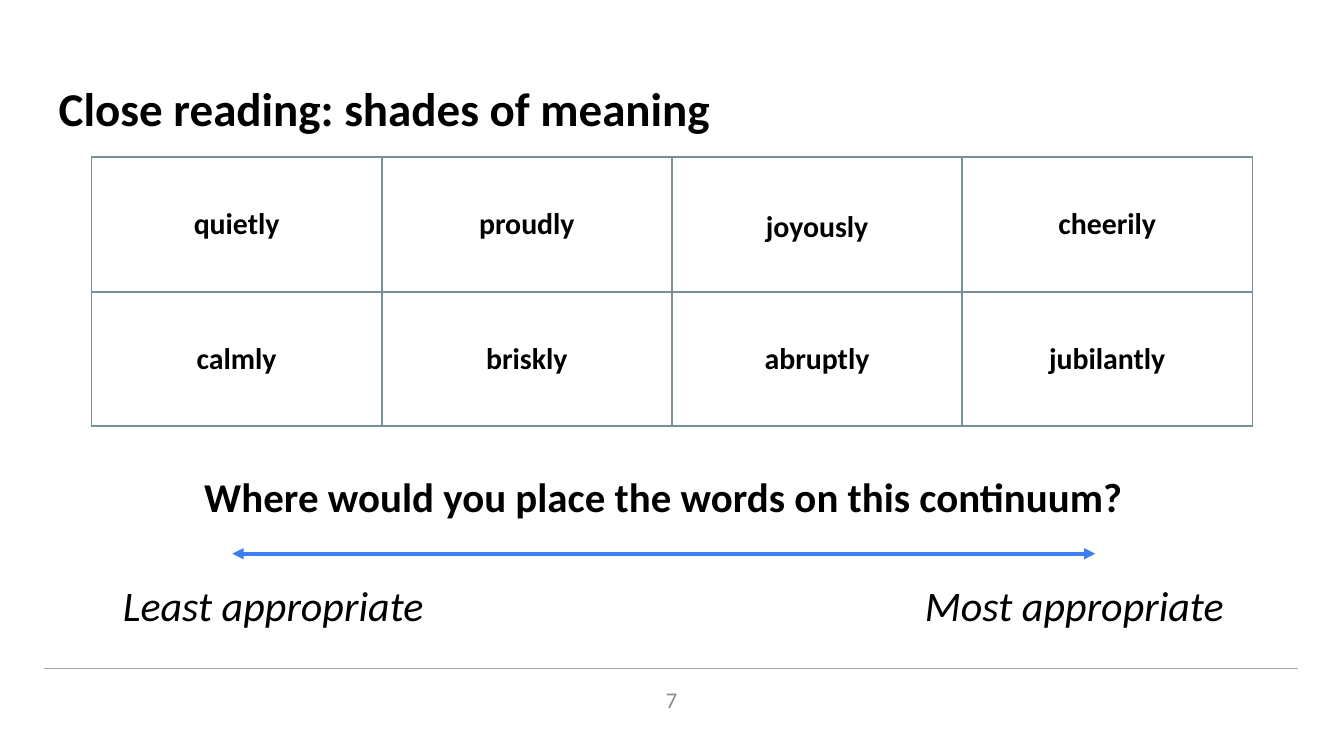
import pptx
import pptx.util
import pptx.dml.color
import pptx.enum.shapes
import pptx.enum.text
import pptx.oxml
import pptx.oxml.ns
from pptx.util import Cm

FONT = "Calibri"
COLORS = {
    "text": "000000",
    "grid": "78909C",
    "arrow": "3B7FF2",
    "rule": "A5A5A5",
    "number": "898989",
}
WORDS = [
    ["quietly", "proudly", "joyously", "cheerily"],
    ["calmly", "briskly", "abruptly", "jubilantly"],
]
ALIGN = pptx.enum.text.PP_ALIGN
ANCHOR = pptx.enum.text.MSO_ANCHOR


def rgb(name):
    return pptx.dml.color.RGBColor.from_string(COLORS[name])


def xml(tag, inner="", attrs=""):
    ns = pptx.oxml.ns.nsdecls("a")
    return pptx.oxml.parse_xml(f"<a:{tag} {ns} {attrs}>{inner}</a:{tag}>")


def style_text(tf, text, size, color="text", align=ALIGN.LEFT, bold=False, italic=False):
    tf.text = text
    p = tf.paragraphs[0]
    p.alignment = align
    for r in p.runs:
        r.font.name = FONT
        r.font.size = pptx.util.Pt(size)
        r.font.bold = bold
        r.font.italic = italic
        r.font.color.rgb = rgb(color)


def add_text(slide, box, text, size, anchor=ANCHOR.TOP, **style):
    tf = slide.shapes.add_textbox(*map(Cm, box)).text_frame
    tf.word_wrap = True
    tf.vertical_anchor = anchor
    style_text(tf, text, size, **style)


def add_line(slide, x1, x2, y, color, width, arrows=False):
    """Draw a horizontal line, with an arrowhead at each end if asked."""
    straight = pptx.enum.shapes.MSO_CONNECTOR.STRAIGHT
    line = slide.shapes.add_connector(straight, Cm(x1), Cm(y), Cm(x2), Cm(y))
    line.line.color.rgb = rgb(color)
    line.line.width = pptx.util.Pt(width)
    if arrows:
        ln = line.line._get_or_add_ln()
        for end in ("headEnd", "tailEnd"):
            ln.append(xml(end, attrs='type="triangle"'))
    line._element.spPr.append(xml("effectLst"))


def add_borders(cell):
    tc_pr = cell._tc.get_or_add_tcPr()
    fill = f'<a:solidFill><a:srgbClr val="{COLORS["grid"]}"/></a:solidFill>'
    for i, side in enumerate(("lnL", "lnR", "lnT", "lnB")):
        tc_pr.insert(i, xml(side, fill, f'w="{pptx.util.Pt(1)}"'))


def add_word_table(slide, left, top, width, height):
    rows, cols = len(WORDS), len(WORDS[0])
    frame = slide.shapes.add_table(rows, cols, Cm(left), Cm(top), Cm(width), Cm(height))
    table = frame.table
    table.first_row = False
    table.horz_banding = False
    for col in table.columns:
        col.width = Cm(width / cols)
    for row, words in zip(table.rows, WORDS):
        row.height = Cm(height / rows)
        for cell, word in zip(row.cells, words):
            cell.fill.background()
            add_borders(cell)
            cell.vertical_anchor = ANCHOR.MIDDLE
            cell.margin_left = cell.margin_right = Cm(0.28)
            style_text(cell.text_frame, word, 16, align=ALIGN.CENTER, bold=True)
            if word == "joyously":
                cell.text_frame.paragraphs[0].line_spacing = 1.15


def add_continuum(slide, left, top, width):
    """Place the question, the two-headed arrow and the labels of its ends."""
    add_text(slide, (left + 2.21, top, 18.21, 1.7),
             "Where would you place the words on this continuum?", 21.9, bold=True)
    add_line(slide, left + 2.99, left + 19.3, top + 1.67, "arrow", 2, arrows=True)
    ends = [("Least appropriate", left, 7.54),
            ("Most appropriate", left + width - 6.48, 6.48)]
    for label, x, w in ends:
        add_text(slide, (x, top + 2.03, w, 1.27), label, 22.5,
                 align=ALIGN.CENTER, italic=True)


def add_footer(slide, left, top, width):
    add_line(slide, left, left + width, top, "rule", 0.75)
    number_width = 5.92
    add_text(slide, (left + (width - number_width) / 2, top + 0.08, number_width, 1.02),
             "7", 12, anchor=ANCHOR.MIDDLE, color="number", align=ALIGN.CENTER)


def main():
    prs = pptx.Presentation()
    prs.slide_width, prs.slide_height = Cm(25.4), Cm(14.28)
    slide = prs.slides.add_slide(prs.slide_layouts[6])
    add_footer(slide, 0.84, 12.63, 23.7)
    add_text(slide, (0.86, 1.24, 23.67, 1.6), "Close reading: shades of meaning",
             25.2, anchor=ANCHOR.MIDDLE, bold=True)
    add_word_table(slide, 1.73, 2.97, 21.94, 5.08)
    add_continuum(slide, 1.4, 8.79, 22.15)
    prs.save("out.pptx")


if __name__ == "__main__":
    main()
